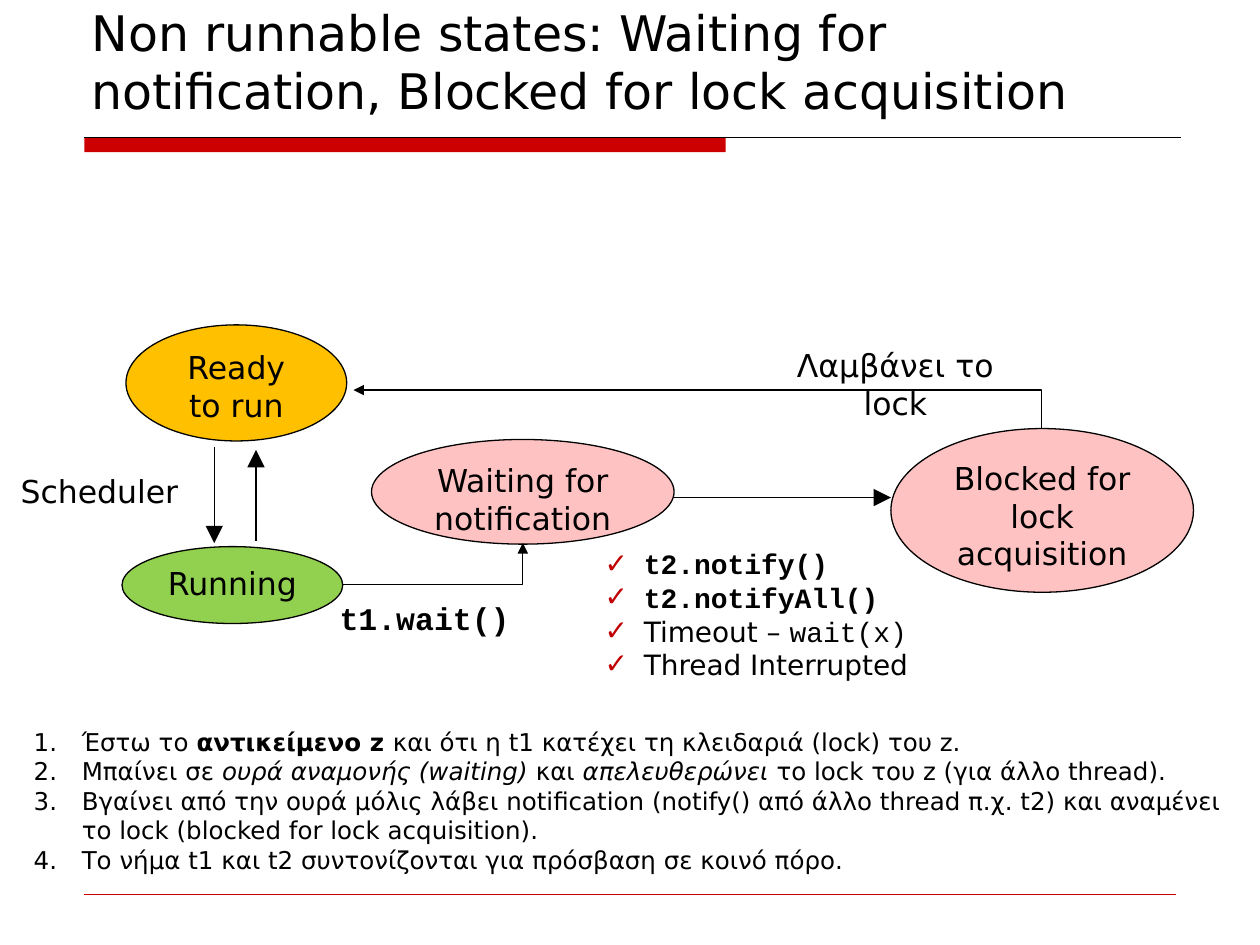
from pptx import Presentation
from pptx import util as u
from pptx.dml.color import RGBColor
from pptx.enum import shapes, text
from pptx.oxml.ns import qn
from lxml import etree

COLOURS = {
    "ink": "000000", "rule": "CC0000", "tick": "C00000",
    "ready": "FFC000", "running": "92D050", "stopped": "FFC2C2",
}
SANS, MONO = "DejaVu Sans", "Courier New"
BOLD, ITALIC, CODE = {"bold": True}, {"italic": True}, {"name": MONO}


class StateSlide:
    """Draws the thread state diagram on one slide in a shared style."""

    def __init__(self, slide):
        self.slide = slide

    def colour(self, name):
        return RGBColor.from_string(COLOURS[name])

    def shape(self, kind, box, fill, outlined=True):
        shape = self.slide.shapes.add_shape(kind, *map(u.Cm, box))
        shape.shadow.inherit = False
        shape.fill.solid()
        shape.fill.fore_color.rgb = self.colour(fill)
        if outlined:
            shape.line.color.rgb = self.colour("ink")
            shape.line.width = u.Pt(0.75)
        else:
            shape.line.fill.background()
        return shape

    def set_text(self, paragraph, runs, size, font=SANS, bold=False, centred=False):
        for content, style in runs:
            run = paragraph.add_run()
            run.text = content
            for name, value in style.items():
                setattr(run.font, name, value)
        paragraph.alignment = text.PP_ALIGN.CENTER if centred else text.PP_ALIGN.LEFT
        paragraph.font.size = u.Pt(size)
        paragraph.font.name = font
        paragraph.font.bold = bold
        paragraph.font.color.rgb = self.colour("ink")

    def state(self, label, box, fill):
        shape = self.shape(shapes.MSO_SHAPE.OVAL, box, fill)
        frame = shape.text_frame
        frame.word_wrap = True
        frame.vertical_anchor = text.MSO_ANCHOR.TOP
        self.set_text(frame.paragraphs[0], [(label, {})], 18, centred=True)

    def frame(self, box, wrap=True):
        frame = self.slide.shapes.add_textbox(*map(u.Cm, box)).text_frame
        frame.word_wrap = wrap
        return frame

    def title(self, label, box):
        frame = self.frame(box)
        frame.vertical_anchor = text.MSO_ANCHOR.BOTTOM
        self.set_text(frame.paragraphs[0], [(label, {})], 28)

    def label(self, label, box, wrap=False, **style):
        frame = self.frame(box, wrap)
        self.set_text(frame.paragraphs[0], [(label, {})], 18, centred=True, **style)

    def items(self, rows, box, size, indent, ticked=False):
        frame = self.frame(box, wrap=not ticked)
        for index, (runs, style) in enumerate(rows):
            paragraph = frame.add_paragraph() if index else frame.paragraphs[0]
            properties = paragraph._p.get_or_add_pPr()
            properties.set("marL", str(u.Cm(indent)))
            properties.set("indent", str(-u.Cm(indent)))
            if ticked:
                bullet_colour = etree.SubElement(properties, qn("a:buClr"))
                etree.SubElement(bullet_colour, qn("a:srgbClr"), val=COLOURS["tick"])
                etree.SubElement(properties, qn("a:buFont"), typeface=SANS)
                etree.SubElement(properties, qn("a:buChar"), char="✓")
            else:
                etree.SubElement(properties, qn("a:buAutoNum"), type="arabicPeriod")
            self.set_text(paragraph, runs, size, **style)

    def line(self, start, end, colour="ink", width=0.75, head=None, bent=False, turn=0):
        kind = shapes.MSO_CONNECTOR.STRAIGHT
        line = self.slide.shapes.add_connector(kind, *map(u.Cm, start + end))
        line.line.color.rgb = self.colour(colour)
        line.line.width = u.Pt(width)
        properties = line._element.spPr
        if bent:
            properties.find(qn("a:prstGeom")).set("prst", "bentConnector2")
        if turn:
            properties.find(qn("a:xfrm")).set("rot", str(turn * 60000))
        if head:
            etree.SubElement(properties.find(qn("a:ln")), qn("a:tailEnd"),
                             type="triangle", w=head, len=head)
        etree.SubElement(properties, qn("a:effectLst"))


def main():
    presentation = Presentation()
    presentation.slide_width, presentation.slide_height = u.Cm(25.4), u.Cm(19.05)
    diagram = StateSlide(presentation.slides.add_slide(presentation.slide_layouts[6]))

    diagram.shape(shapes.MSO_SHAPE.RECTANGLE, (1.7, 2.77, 12.93, 0.3), "rule", outlined=False)
    diagram.line((1.7, 2.77), (23.8, 2.77))
    diagram.line((1.7, 18.03), (23.7, 18.03), "rule", 0.25)
    diagram.title("Non runnable states: Waiting for notification, Blocked for lock acquisition",
                  (1.6, 0.2, 22.22, 2.34))

    diagram.state("Ready to run", (2.54, 6.55, 4.45, 2.34), "ready")
    diagram.state("Running", (2.46, 11.02, 4.45, 1.55), "running")
    diagram.state("Waiting for notification", (7.49, 8.86, 6.1, 2.11), "stopped")
    diagram.line((5.16, 10.9), (5.16, 9.07), head="lg")
    diagram.line((4.32, 9.02), (4.32, 10.95), head="lg")
    diagram.line((6.91, 11.79), (10.54, 10.95), head="med", bent=True)
    diagram.line((13.67, 15.19), (14.45, 1.32), head="med", bent=True, turn=270)
    diagram.state("Blocked for lock acquisition", (17.96, 8.64, 6.1, 3.3), "stopped")
    diagram.line((13.59, 10.03), (17.96, 10.03), head="lg")

    diagram.label("t1.wait()", (6.58, 11.96, 3.96, 1.02), font=MONO, bold=True)
    diagram.label("Scheduler", (0.15, 9.4, 3.71, 1.02))
    diagram.label("Λαμβάνει το lock", (15.25, 6.86, 5.6, 1.02), wrap=True)

    code = {"font": MONO, "bold": True}
    diagram.items([
        ([("t2.notify()", {})], code),
        ([("t2.notifyAll()", {})], code),
        ([("Timeout – ", {}), ("wait(x)", CODE)], {}),
        ([("Thread Interrupted", {})], {}),
    ], (11.94, 10.9, 6.81, 3), 16, 0.79, ticked=True)

    diagram.items([
        ([("Έστω το ", {}), ("αντικείμενο z ", BOLD),
          ("και ότι η t1 κατέχει τη κλειδαριά (lock) του z.", {})], {}),
        ([("Μπαίνει σε ", {}), ("ουρά αναμονής (waiting) ", ITALIC), ("και ", {}),
          ("απελευθερώνει ", ITALIC), ("το lock του z (για άλλο thread).", {})], {}),
        ([("Βγαίνει από την ουρά μόλις λάβει notification (notify() από άλλο thread π.χ. t2) "
           "και αναμένει το lock (blocked for lock acquisition).", {})], {}),
        ([("Το νήμα t1 και t2 συντονίζονται για πρόσβαση σε κοινό πόρο.", {})], {}),
    ], (0.43, 14.53, 24.97, 3.25), 14, 0.97)

    presentation.save("out.pptx")


if __name__ == "__main__":
    main()
